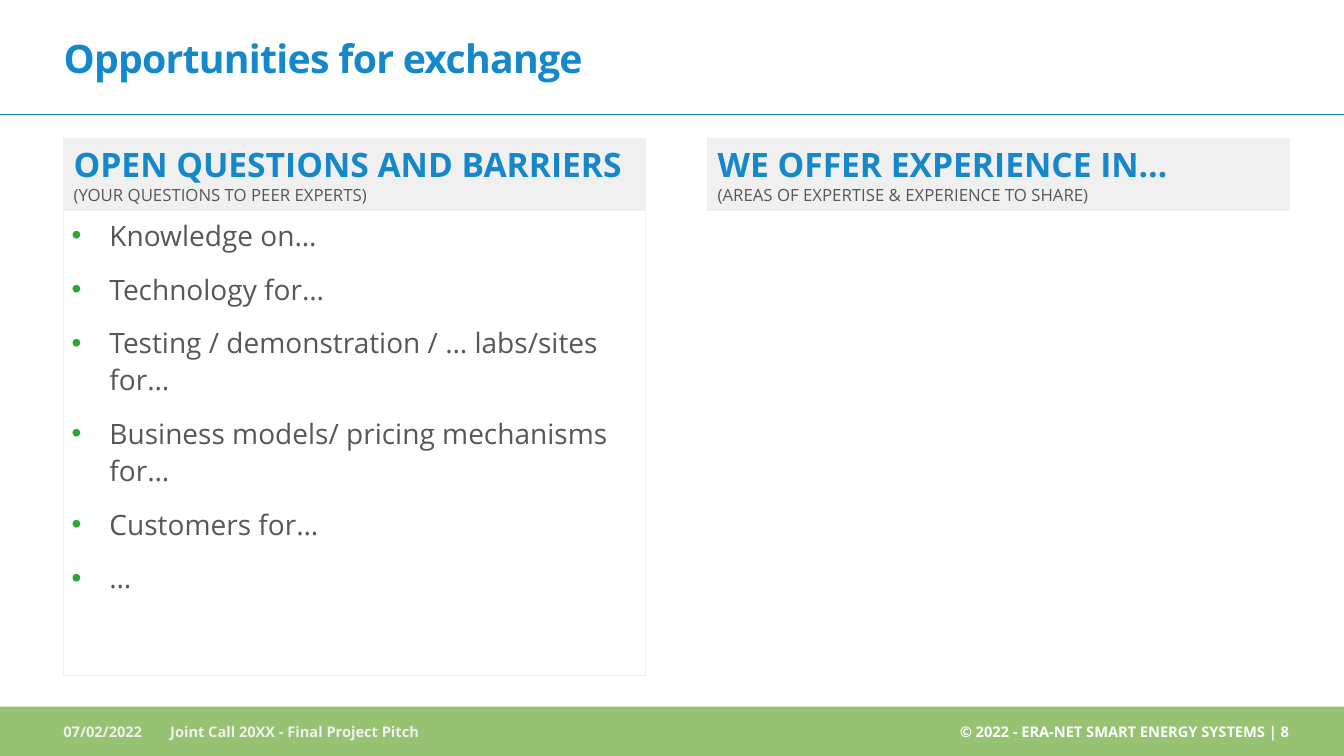
import pptx
import pptx.util
import pptx.dml.color
import pptx.enum.shapes
import pptx.enum.text
import pptx.oxml.ns
import lxml.etree

Pt = pptx.util.Pt
ALIGN = pptx.enum.text.PP_ALIGN
ANCHOR = pptx.enum.text.MSO_ANCHOR
qn = pptx.oxml.ns.qn


class PitchSlide:
    """Style of the project pitch and the slide being filled."""

    colors = {
        "blue": "1488CB",
        "heading": "1488CA",
        "text": "575756",
        "bullet": "28A639",
        "panel": "F0F0F0",
        "footer": "96C271",
        "white": "FFFFFF",
    }
    font_name = "Open Sans"

    def __init__(self, deck):
        self.slide = deck.slides.add_slide(deck.slide_layouts[4])

    def rgb(self, color):
        return pptx.dml.color.RGBColor.from_string(self.colors[color])

    def style_font(self, font, size, color, bold=False):
        font.name = self.font_name
        font.size = Pt(size)
        font.bold = bold
        font.color.rgb = self.rgb(color)

    def place(self, shape, box):
        shape.left, shape.top, shape.width, shape.height = map(Pt, box)

    def set_frame(self, shape, anchor, insets=(7.2, 3.6, 7.2, 3.6)):
        frame = shape.text_frame
        frame.word_wrap = True
        frame.auto_size = pptx.enum.text.MSO_AUTO_SIZE.NONE
        frame.vertical_anchor = anchor
        (frame.margin_left, frame.margin_top,
         frame.margin_right, frame.margin_bottom) = map(Pt, insets)
        return frame

    def outline(self, shape):
        shape.line.color.rgb = self.rgb("panel")
        shape.line.width = Pt(0.75)

    def footer_bar(self, box):
        bar = self.slide.shapes.add_shape(
            pptx.enum.shapes.MSO_SHAPE.RECTANGLE, *map(Pt, box))
        bar.shadow.inherit = False
        bar.fill.solid()
        bar.fill.fore_color.rgb = self.rgb("footer")
        bar.line.fill.background()

    def rule(self, top, width):
        rule = self.slide.shapes.add_connector(
            pptx.enum.shapes.MSO_CONNECTOR.STRAIGHT, 0, Pt(top), Pt(width), Pt(top))
        rule.line.color.rgb = self.rgb("blue")
        rule.line.width = Pt(1)
        lxml.etree.SubElement(rule._element.spPr, qn("a:effectLst"))

    def title(self, wording, box):
        title = self.slide.shapes.title
        self.place(title, box)
        frame = self.set_frame(title, ANCHOR.MIDDLE, (7.2, 3.6, 7.2, 0))
        frame.text = wording
        paragraph = frame.paragraphs[0]
        paragraph.alignment = ALIGN.LEFT
        self.style_font(paragraph.font, 28, "blue", True)
        paragraph.runs[0]._r.get_or_add_rPr().set("spc", "-50")

    def heading(self, index, headline, hint, box):
        panel = self.slide.placeholders[index]
        self.place(panel, box)
        panel.fill.solid()
        panel.fill.fore_color.rgb = self.rgb("panel")
        self.outline(panel)
        paragraph = self.set_frame(panel, ANCHOR.MIDDLE).paragraphs[0]
        paragraph.space_before = Pt(0)
        headline_run = paragraph.add_run()
        headline_run.text = headline
        self.style_font(headline_run.font, 24, "heading", True)
        paragraph.add_line_break()
        hint_run = paragraph.add_run()
        hint_run.text = hint
        self.style_font(hint_run.font, 12, "text")

    def bullet_list(self, index, items, box):
        panel = self.slide.placeholders[index]
        self.place(panel, box)
        self.outline(panel)
        frame = self.set_frame(panel, ANCHOR.TOP, (5.76, 3.6, 0, 3.6))
        frame.text = "\n".join(items)
        for number, paragraph in enumerate(frame.paragraphs):
            paragraph.line_spacing = 1.1
            paragraph.space_before = Pt(12 if number else 0)
            self.add_bullet(paragraph)
            self.style_font(paragraph.font, 20, "text")

    def add_bullet(self, paragraph):
        properties = paragraph._p.get_or_add_pPr()
        properties.set("marL", str(Pt(27)))
        properties.set("indent", str(Pt(-27)))
        bullet_color = lxml.etree.SubElement(properties, qn("a:buClr"))
        lxml.etree.SubElement(
            bullet_color, qn("a:srgbClr"), val=self.colors["bullet"])
        lxml.etree.SubElement(properties, qn("a:buFont"), typeface="Arial")
        lxml.etree.SubElement(properties, qn("a:buChar"), char="•")

    def footer_text(self, wording, box, color="panel", align=ALIGN.LEFT, right_inset=7.2):
        note = self.slide.shapes.add_textbox(*map(Pt, box))
        frame = self.set_frame(note, ANCHOR.MIDDLE, (7.2, 3.6, right_inset, 3.6))
        frame.text = wording
        paragraph = frame.paragraphs[0]
        paragraph.alignment = align
        self.style_font(paragraph.font, 10.5, color, True)

    def remove_empty_placeholders(self):
        for placeholder in list(self.slide.placeholders):
            if not placeholder.text_frame.text:
                placeholder._element.getparent().remove(placeholder._element)


def main():
    deck = pptx.Presentation()
    deck.slide_width, deck.slide_height = Pt(960), Pt(540)
    pitch = PitchSlide(deck)

    pitch.footer_bar((0, 504.7, 960, 35.3))
    pitch.rule(82, 960)
    pitch.title("Opportunities for exchange", (38.2, 2.9, 766.8, 73.4))

    pitch.heading(1, "OPEN QUESTIONS AND BARRIERS",
                  "(YOUR QUESTIONS TO PEER EXPERTS)", (45.4, 98.6, 415.4, 51.6))
    pitch.bullet_list(2, [
        "Knowledge on…",
        "Technology for…",
        "Testing / demonstration / … labs/sites for…",
        "Business models/ pricing mechanisms for…",
        "Customers for…",
        "…",
    ], (45.4, 150, 415.4, 332.4))
    pitch.heading(3, "WE OFFER EXPERIENCE IN…",
                  "(AREAS OF EXPERTISE & EXPERIENCE TO SHARE)", (505.4, 98.6, 416, 51.6))

    pitch.footer_text("07/02/2022", (38.2, 508.3, 76.3, 28.8))
    pitch.footer_text("Joint Call 20XX - Final Project Pitch", (114.5, 508.3, 538.5, 28.8))
    pitch.footer_text("© 2022 - ERA-NET SMART ENERGY SYSTEMS | 8",
                      (653, 506.9, 268, 31.7), "white", ALIGN.RIGHT, 0)

    pitch.remove_empty_placeholders()
    deck.save("out.pptx")


if __name__ == "__main__":
    main()
